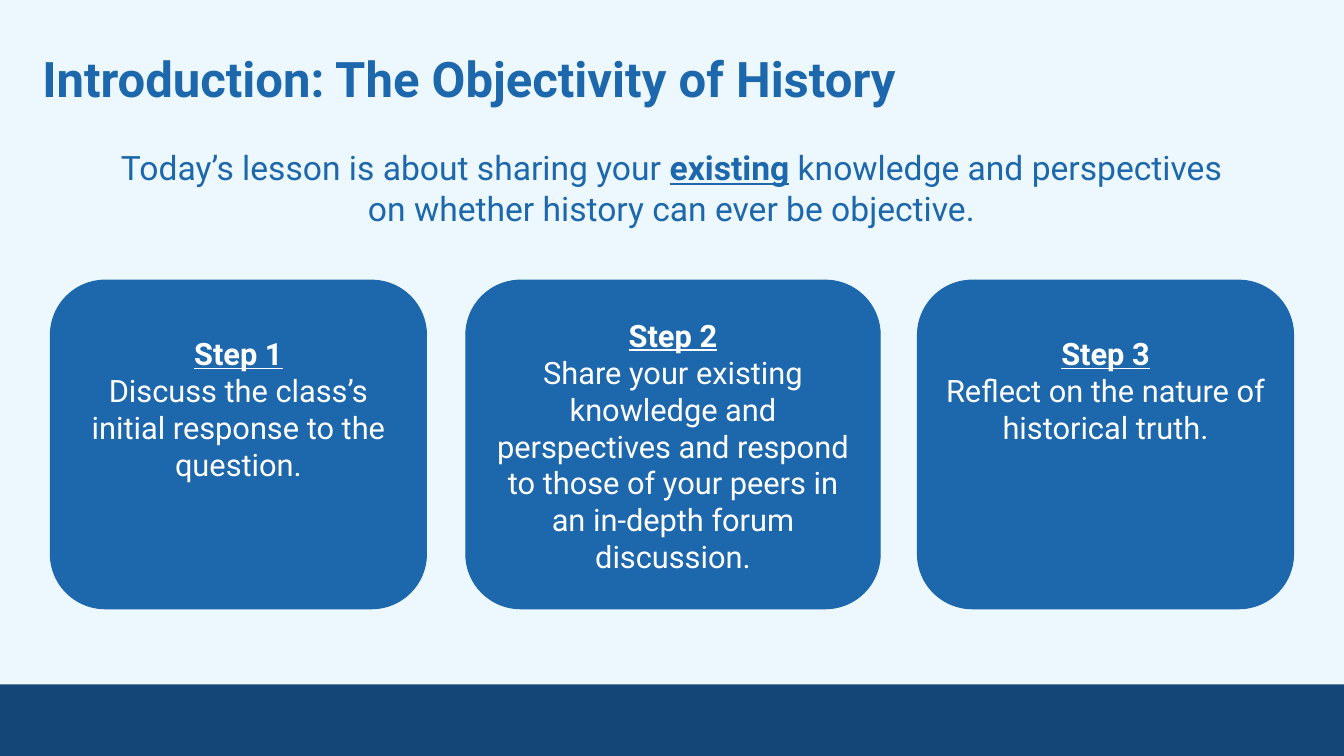
from pptx import Presentation
from pptx.dml.color import RGBColor
from pptx.enum.shapes import MSO_SHAPE
from pptx.enum.text import MSO_ANCHOR, PP_ALIGN
from pptx.util import Inches, Pt

BLUE, NAVY, PALE, WHITE = "1D67AC", "144777", "ECF8FE", "FFFFFF"


def rgb(color):
    return RGBColor.from_string(color)


def add_run(p, text, size, color, bold=False, underline=False):
    r = p.add_run()
    r.text = text
    r.font.name = "Roboto"
    r.font.size = Pt(size)
    r.font.color.rgb = rgb(color)
    r.font.bold = bold
    r.font.underline = underline


prs = Presentation()
prs.slide_width, prs.slide_height = Inches(13.33), Inches(7.5)
s = prs.slides.add_slide(prs.slide_layouts[6])
s.background.fill.solid()
s.background.fill.fore_color.rgb = rgb(PALE)

# Footer bar
bar = s.shapes.add_shape(MSO_SHAPE.RECTANGLE, Inches(-0.02), Inches(6.79),
                         Inches(13.37), Inches(0.71))
bar.shadow.inherit = False
bar.fill.solid()
bar.fill.fore_color.rgb = rgb(NAVY)
bar.line.fill.background()

# Title
title = s.shapes.add_textbox(Inches(0.29), Inches(0.35), Inches(12.19), Inches(0.86))
tf = title.text_frame
tf.word_wrap = True
tf.margin_left = tf.margin_right = tf.margin_top = tf.margin_bottom = Inches(0.13)
add_run(tf.paragraphs[0], "Introduction: The Objectivity of History", 35, BLUE, bold=True)

# Lesson summary
summary = s.shapes.add_textbox(Inches(0.91), Inches(1.36), Inches(11.5), Inches(1.2))
tf = summary.text_frame
tf.word_wrap = True
tf.margin_left = tf.margin_right = tf.margin_top = tf.margin_bottom = Inches(0.1)
p = tf.paragraphs[0]
p.alignment = PP_ALIGN.CENTER
add_run(p, "Today’s lesson is about sharing your ", 24, BLUE)
add_run(p, "existing", 24, BLUE, bold=True, underline=True)
add_run(p, " knowledge and perspectives on whether history can ever be objective.", 24, BLUE)

# Step cards: left, width, top margin, text
steps = [
    (0.5, 3.73, 0.38, "Discuss the class’s initial response to the question."),
    (4.62, 4.11, 0.2, "Share your existing knowledge and perspectives and respond "
                      "to those of your peers in an in-depth forum discussion."),
    (9.1, 3.73, 0.38, "Reflect on the nature of historical truth."),
]
for number, (left, width, top_margin, text) in enumerate(steps, 1):
    card = s.shapes.add_shape(MSO_SHAPE.ROUNDED_RECTANGLE, Inches(left), Inches(2.78),
                              Inches(width), Inches(3.26))
    card.adjustments[0] = 0.167
    card.shadow.inherit = False
    card.fill.solid()
    card.fill.fore_color.rgb = rgb(BLUE)
    card.line.color.rgb = rgb(BLUE)
    card.line.width = Pt(0.75)
    tf = card.text_frame
    tf.word_wrap = True
    tf.vertical_anchor = MSO_ANCHOR.TOP
    tf.margin_left = tf.margin_right = tf.margin_bottom = Inches(0.1)
    tf.margin_top = Inches(top_margin)
    heading, body = tf.paragraphs[0], tf.add_paragraph()
    heading.alignment = body.alignment = PP_ALIGN.CENTER
    add_run(heading, f"Step {number}", 22, WHITE, bold=True, underline=True)
    add_run(body, text, 22, WHITE)

prs.save("out.pptx")
